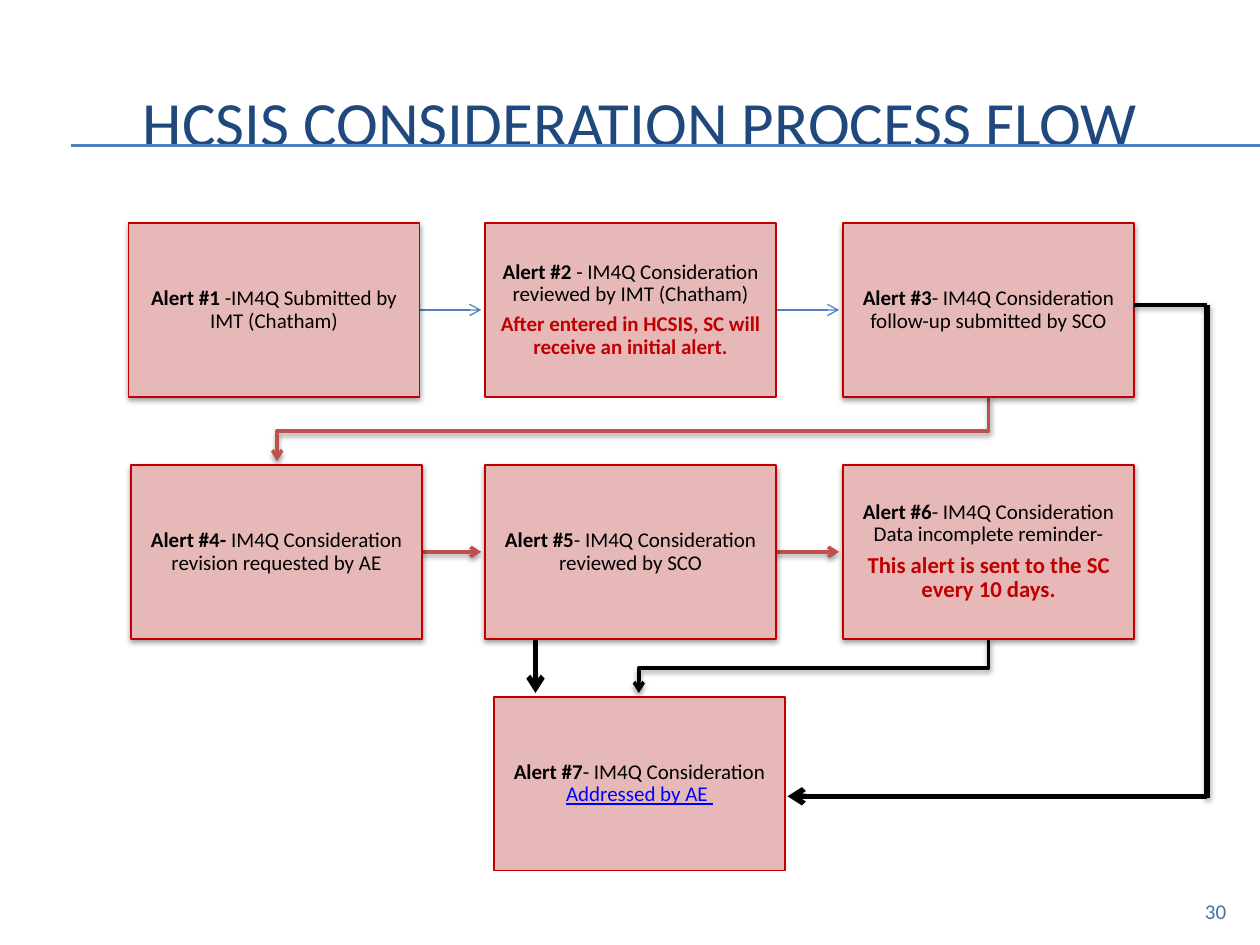
from dataclasses import dataclass

from lxml.etree import SubElement
from pptx import Presentation
from pptx.dml.color import RGBColor
from pptx.enum.shapes import MSO_CONNECTOR, MSO_SHAPE
from pptx.enum.text import MSO_ANCHOR, PP_ALIGN
from pptx.oxml.ns import qn
from pptx.util import Inches, Pt


@dataclass(frozen=True)
class Theme:
    font: str = "Calibri"
    title: str = "1F497D"
    blue: str = "4F81BD"
    red: str = "C0504D"
    alert: str = "C00000"
    box: str = "E6B9B8"
    ink: str = "000000"
    link: str = "0000FF"
    number: str = "4471A6"
    title_size: int = 36
    text_size: int = 12
    notice_size: int = 13


THEME = Theme()
BOX_W, BOX_H = 2.31, 1.38
COL_1, COL_2, COL_3 = 1.02, 3.85, 6.69
ROW_1, ROW_2, ROW_3 = 1.77, 3.69, 5.53
MID_1, MID_2 = ROW_1 + BOX_H / 2, ROW_2 + BOX_H / 2
COL_3_MID = COL_3 + BOX_W / 2
GAP = 0.03  # space between an arrow tip and its box


def rgb(code):
    return RGBColor.from_string(code)


def set_effects(shape, shadow):
    """Replace the themed shadow by a soft one below, or by none."""
    effects = SubElement(shape._element.spPr, qn("a:effectLst"))
    if shadow:
        outer = SubElement(effects, qn("a:outerShdw"), blurRad=str(Pt(3.1)),
                           dist=str(Pt(1.6)), dir="5400000", rotWithShape="0")
        color = SubElement(outer, qn("a:srgbClr"), val=THEME.ink)
        SubElement(color, qn("a:alpha"), val="38000")


def style_line(shape, color, width, arrow=False, shadow=False):
    shape.line.color.rgb = rgb(color)
    shape.line.width = Pt(width)
    if arrow:
        SubElement(shape.line._get_or_add_ln(), qn("a:tailEnd"), type="arrow")
    set_effects(shape, shadow)


def add_straight(slide, start, end, color, width, arrow=False, shadow=False):
    points = [Inches(value) for value in (*start, *end)]
    line = slide.shapes.add_connector(MSO_CONNECTOR.STRAIGHT, *points)
    style_line(line, color, width, arrow, shadow)


def add_elbow(slide, start, turn_y, end, color):
    """Arrow going down, across at turn_y, then down again."""
    corners = [(start[0], turn_y), (end[0], turn_y), end]
    builder = slide.shapes.build_freeform(Inches(start[0]), Inches(start[1]))
    builder.add_line_segments(
        [(Inches(x), Inches(y)) for x, y in corners], close=False)
    elbow = builder.convert_to_shape()
    elbow.fill.background()
    style_line(elbow, color, 2, arrow=True, shadow=True)


def format_font(font, size, color):
    font.name = THEME.font
    font.size = Pt(size)
    font.color.rgb = rgb(color)


def add_alert(slide, left, top, label, text, notice=None,
              notice_size=THEME.text_size, link=None, shadow=True):
    box = slide.shapes.add_shape(MSO_SHAPE.RECTANGLE, Inches(left), Inches(top),
                                 Inches(BOX_W), Inches(BOX_H))
    box.fill.solid()
    box.fill.fore_color.rgb = rgb(THEME.box)
    style_line(box, THEME.alert, 1, shadow=shadow)

    frame = box.text_frame
    frame.word_wrap = True
    frame.vertical_anchor = MSO_ANCHOR.MIDDLE
    frame.margin_left = frame.margin_right = Inches(0.09)
    frame.margin_top = frame.margin_bottom = Inches(0.09)

    step = frame.paragraphs[0]
    format_font(step.font, THEME.text_size, THEME.ink)
    label_run = step.add_run()
    label_run.text = label
    label_run.font.bold = True
    step.add_run().text = text
    if link:
        link_run = step.add_run()
        link_run.text = link
        link_run.font.underline = True
        link_run.font.color.rgb = rgb(THEME.link)
    if notice:
        warning = frame.add_paragraph()
        warning.text = notice
        format_font(warning.font, notice_size, THEME.alert)
        warning.font.bold = True
    for paragraph in frame.paragraphs:
        paragraph.alignment = PP_ALIGN.CENTER
        paragraph.line_spacing = 0.9
        paragraph.space_after = Pt(4.2)


def add_title(slide, text):
    title = slide.shapes.title
    title.left, title.top = Inches(0.33), Inches(0.5)
    title.width, title.height = Inches(9.5), Inches(0.92)
    title.text_frame.text = text
    title.text_frame.vertical_anchor = MSO_ANCHOR.MIDDLE
    heading = title.text_frame.paragraphs[0]
    heading.alignment = PP_ALIGN.CENTER
    format_font(heading.font, THEME.title_size, THEME.title)


def add_page_number(slide, text):
    box = slide.shapes.add_textbox(Inches(9), Inches(7.08),
                                   Inches(0.83), Inches(0.27))
    box.text_frame.word_wrap = True
    number = box.text_frame.paragraphs[0]
    number.text = text
    number.alignment = PP_ALIGN.RIGHT
    format_font(number.font, THEME.text_size, THEME.number)


def add_arrows(slide):
    # Steps along each row
    for left, right, y, color, width, shadow in (
            (COL_1, COL_2, MID_1, THEME.blue, 0.75, False),
            (COL_2, COL_3, MID_1, THEME.blue, 0.75, False),
            (COL_1 + 0.02, COL_2, MID_2, THEME.red, 2, True),
            (COL_2, COL_3, MID_2, THEME.red, 2, True)):
        add_straight(slide, (left + BOX_W, y), (right - GAP, y),
                     color, width, arrow=True, shadow=shadow)

    # Steps down to the next row
    add_elbow(slide, (COL_3_MID, ROW_1 + BOX_H), 3.42,
              (2.2, ROW_2 - GAP), THEME.red)
    add_elbow(slide, (COL_3_MID, ROW_2 + BOX_H), 5.3,
              (5.07, ROW_3 - GAP), THEME.ink)


def add_bypass(slide):
    """Black route from alert 3 round to alert 7, and alert 5 straight down."""
    add_straight(slide, (9, 2.42), (9.58, 2.42), THEME.ink, 2, shadow=True)
    add_straight(slide, (9.58, 2.42), (9.58, 6.33), THEME.ink, 3, shadow=True)
    add_straight(slide, (9.58, 6.32), (6.25, 6.32), THEME.ink, 3, arrow=True)
    add_straight(slide, (4.25, 5.08), (4.25, 5.5), THEME.ink, 3, arrow=True)


def main():
    deck = Presentation()
    deck.slide_width, deck.slide_height = Inches(10), Inches(7.5)
    slide = deck.slides.add_slide(deck.slide_layouts[5])

    # Heading with its double rule
    for y in (1.15, 1.16):
        add_straight(slide, (0.56, y), (10, y), THEME.blue, 0.75)
    add_title(slide, "HCSIS CONSIDERATION PROCESS FLOW")

    # Flow
    add_arrows(slide)
    add_alert(slide, COL_1, ROW_1, "Alert #1", " -IM4Q Submitted by IMT (Chatham)")
    add_alert(slide, COL_2, ROW_1, "Alert #2",
              " - IM4Q Consideration reviewed by IMT (Chatham)",
              notice="After entered in HCSIS, SC will receive an initial alert.",
              shadow=False)
    add_alert(slide, COL_3, ROW_1, "Alert #3",
              "- IM4Q Consideration follow-up submitted by SCO")
    add_alert(slide, COL_1 + 0.02, ROW_2, "Alert #4- ",
              "IM4Q Consideration revision requested by AE")
    add_alert(slide, COL_2, ROW_2, "Alert #5", "- IM4Q Consideration reviewed by SCO")
    add_alert(slide, COL_3, ROW_2, "Alert #6",
              "- IM4Q Consideration Data incomplete reminder-",
              notice="This alert is sent to the SC every 10 days.",
              notice_size=THEME.notice_size)
    add_alert(slide, 3.92, ROW_3, "Alert #7", "- IM4Q Consideration ",
              link="Addressed by AE ", shadow=False)

    add_page_number(slide, "30")
    add_bypass(slide)
    deck.save("out.pptx")


if __name__ == "__main__":
    main()
